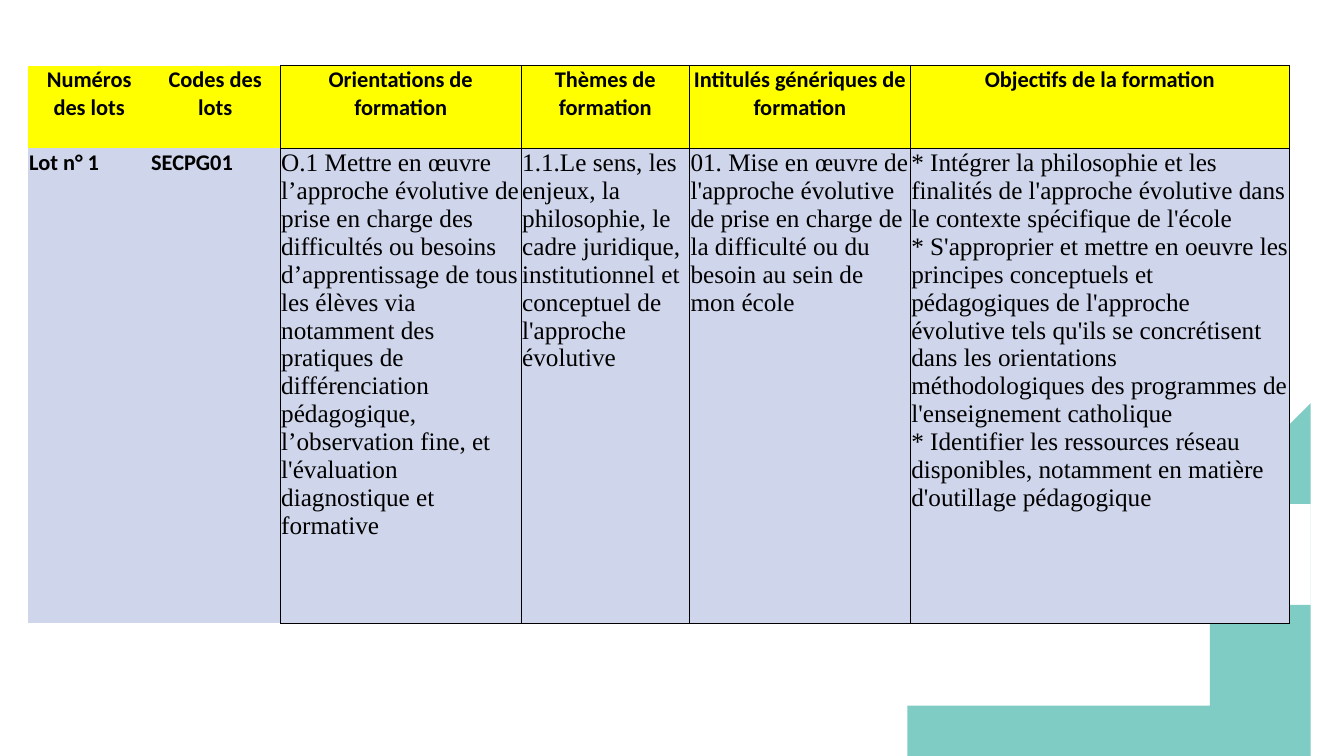
from itertools import product

from lxml import etree
from pptx import Presentation
from pptx import util as u
from pptx.dml.color import RGBColor
from pptx.enum import text
from pptx.oxml import ns

COLORS = {"wave": "55BCB1", "header": "FFFF00", "body": "CFD5EA", "ink": "000000"}

HEADERS = [
    "Numéros des lots", "Codes des lots", "Orientations de formation",
    "Thèmes de formation", "Intitulés génériques de formation",
    "Objectifs de la formation",
]
LOT = [
    "Lot n° 1",
    "SECPG01",
    "O.1 Mettre en œuvre l’approche évolutive de prise en charge des difficultés "
    "ou besoins d’apprentissage de tous les élèves via notamment des pratiques de "
    "différenciation pédagogique, l’observation fine, et l'évaluation diagnostique "
    "et formative",
    "1.1.Le sens, les enjeux, la philosophie, le cadre juridique, institutionnel "
    "et conceptuel de l'approche évolutive",
    "01. Mise en œuvre de l'approche évolutive de prise en charge de la difficulté "
    "ou du besoin au sein de mon école",
    "* Intégrer la philosophie et les finalités de l'approche évolutive dans le "
    "contexte spécifique de l'école\n"
    "* S'approprier et mettre en oeuvre les principes conceptuels et pédagogiques "
    "de l'approche évolutive tels qu'ils se concrétisent dans les orientations "
    "méthodologiques des programmes de l'enseignement catholique\n"
    "* Identifier les ressources réseau disponibles, notamment en matière "
    "d'outillage pédagogique",
]
COLUMN_WIDTHS = [1.21, 1.29, 2.39, 1.67, 2.19, 3.76]
ROW_HEIGHTS = [0.82, 4.71]
CODE_COLUMNS = 2  # leading columns without a grid

WAVE_START = (13.33, 3.82)
WAVE_CURVES = [
    ((13.27, 3.83), (13.22, 3.85), (13.16, 3.87)),
    ((12.3, 4.19), (12.44, 4.86), (12.57, 5.51)),
    ((12.72, 6.23), (12.22, 6.55), (11.41, 6.78)),
    ((10.76, 6.96), (10.06, 7.04), (9.49, 7.34)),
    ((9.39, 7.4), (9.32, 7.44), (9.25, 7.5)),
]


def curve_points(start, curves, steps=24):
    """Sample a chain of cubic Bézier curves."""
    points = []
    for first, second, end in curves:
        for step in range(1, steps + 1):
            t = step / steps
            weights = ((1 - t) ** 3, 3 * t * (1 - t) ** 2, 3 * t * t * (1 - t), t ** 3)
            corners = (start, first, second, end)
            points.append(tuple(sum(w * corner[axis] for w, corner in zip(weights, corners))
                                for axis in (0, 1)))
        start = end
    return points


def write(frame, content, *, font, size, bold=False, align=text.PP_ALIGN.LEFT):
    para = frame.paragraphs[0]
    para.text = content
    para.alignment = align
    for span in para.runs:
        span.font.name = font
        span.font.size = u.Pt(size)
        span.font.bold = bold
        span.font.color.rgb = RGBColor.from_string(COLORS["ink"])


class SlideBuilder:
    def __init__(self, deck):
        self.page = deck.slides.add_slide(deck.slide_layouts[6])

    def wave(self, start, curves, bottom, opacity):
        builder = self.page.shapes.build_freeform(*start, scale=u.Inches(1))
        builder.add_line_segments(curve_points(start, curves) + [(start[0], bottom)])
        shape = builder.convert_to_shape()
        shape.shadow.inherit = False
        shape.line.fill.background()
        shape.fill.solid()
        shape.fill.fore_color.rgb = RGBColor.from_string(COLORS["wave"])
        color = shape.fill._xPr.find(".//" + ns.qn("a:srgbClr"))
        etree.SubElement(color, ns.qn("a:alpha"), val=str(opacity * 1000))

    def table(self, left, top, widths, heights, rows):
        table = self.page.shapes.add_table(
            len(rows), len(widths), u.Inches(left), u.Inches(top),
            u.Inches(sum(widths)), u.Inches(sum(heights))).table
        table.horz_banding = False
        for column, width in zip(table.columns, widths):
            column.width = u.Inches(width)
        for row, height in zip(table.rows, heights):
            row.height = u.Inches(height)
        for r, c in product(range(len(rows)), range(len(widths))):
            self.cell(table.cell(r, c), rows[r][c], r == 0, c)

    def cell(self, cell, content, is_header, column):
        cell.margin_left = cell.margin_right = cell.margin_top = u.Inches(0.01)
        cell.margin_bottom = 0
        cell.fill.solid()
        cell.fill.fore_color.rgb = RGBColor.from_string(
            COLORS["header" if is_header else "body"])
        in_grid = column >= CODE_COLUMNS
        if is_header or not in_grid:
            style = {"font": "Calibri", "size": 16, "bold": True}
        else:
            style = {"font": "Times New Roman", "size": 18}
        if is_header:
            style["align"] = text.PP_ALIGN.CENTER
        write(cell.text_frame, content, **style)
        sides = "LRTB" if in_grid else "R" if column == CODE_COLUMNS - 1 else ""
        self.borders(cell, sides)

    def borders(self, cell, sides):
        """Draw the named sides of a cell and clear the others."""
        properties = cell._tc.get_or_add_tcPr()
        for place, side in enumerate("LRTB"):
            line = etree.Element(ns.qn(f"a:ln{side}"), w=str(u.Pt(0.5)))
            if side in sides:
                fill = etree.SubElement(line, ns.qn("a:solidFill"))
                etree.SubElement(fill, ns.qn("a:srgbClr"), val=COLORS["ink"])
            else:
                etree.SubElement(line, ns.qn("a:noFill"))
            properties.insert(place, line)


def main():
    deck = Presentation()
    deck.slide_width, deck.slide_height = u.Inches(13.33), u.Inches(7.5)
    builder = SlideBuilder(deck)
    builder.wave(WAVE_START, WAVE_CURVES, bottom=7.5, opacity=75)
    builder.table(0.28, 0.65, COLUMN_WIDTHS, ROW_HEIGHTS, [HEADERS, LOT])
    deck.save("out.pptx")


if __name__ == "__main__":
    main()
